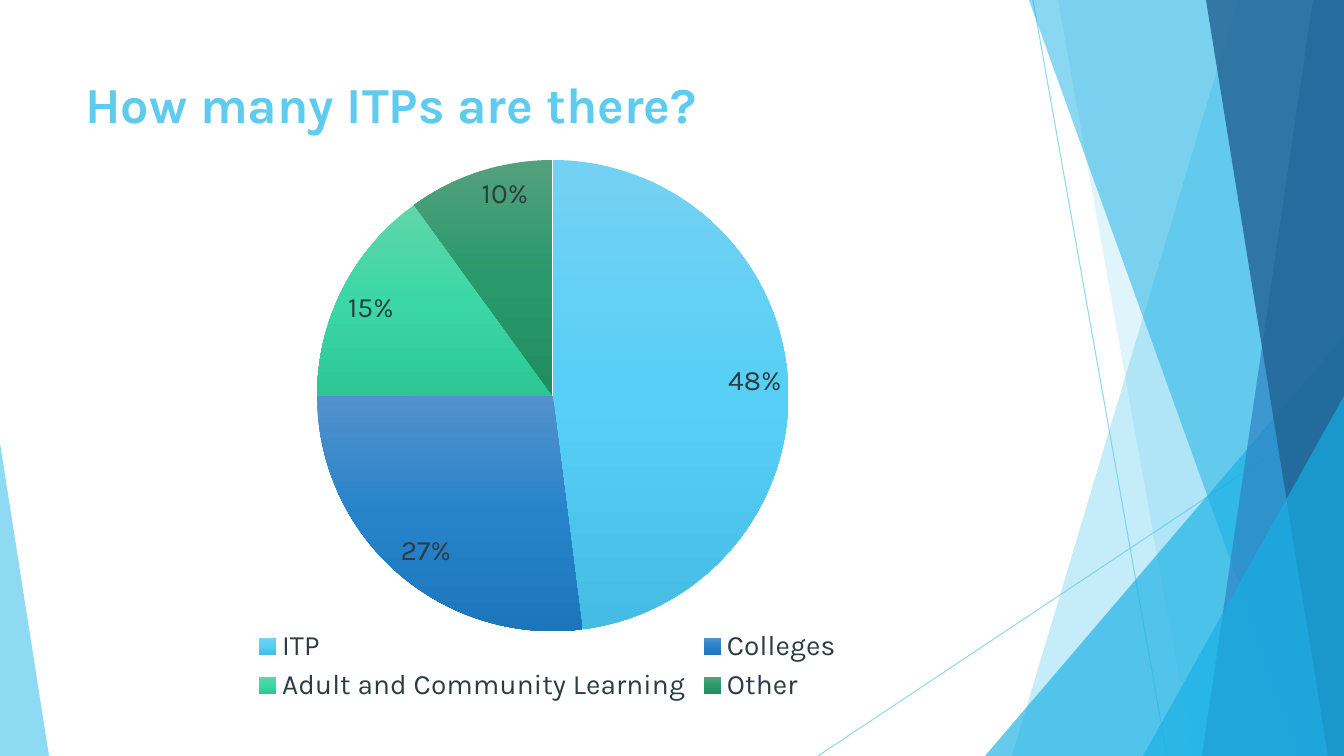
import copy

import pptx
import pptx.chart.data
import pptx.dml.color
import pptx.enum.chart
import pptx.enum.shapes
import pptx.enum.text
import pptx.oxml.ns
import pptx.oxml.xmlchemy
import pptx.util

WIDTH, HEIGHT = 1344, 756
EMU_PER_PX = 12192000 / WIDTH
FONT = "Karla"
SKY, CYAN, BLUE, NAVY, INK = "5FCBEF", "17B0E4", "2E83C3", "226292", "2C3C43"

PROVIDERS = [
    ("ITP", 48, ("75D1F3", "58CFF6", "45BCE3")),
    ("Colleges", 27, ("5491CD", "2784CA", "1C76BB")),
    ("Adult and Community Learning", 15, ("60D6AC", "3BD7A4", "2CC795")),
    ("Other", 10, ("54A17D", "29996C", "208D61")),
]


def px(length):
    return pptx.util.Emu(round(length * EMU_PER_PX))


def rgb(hex_colour):
    return pptx.dml.color.RGBColor.from_string(hex_colour)


def add_child(parent, tag, **attributes):
    child = pptx.oxml.xmlchemy.OxmlElement(tag)
    for name, value in attributes.items():
        child.set(name, str(value))
    parent.append(child)
    return child


def set_opacity(element, percent):
    for colour in element.xpath(".//p:spPr//a:srgbClr"):
        add_child(colour, "a:alpha", val=percent * 1000)


def style_font(font, size, colour, bold=False):
    font.name = FONT
    font.size = pptx.util.Pt(size)
    font.bold = bold
    font.color.rgb = rgb(colour)


def paint(panel, colour, opacity):
    panel.shadow.inherit = False
    panel.fill.solid()
    panel.fill.fore_color.rgb = rgb(colour)
    panel.line.fill.background()
    set_opacity(panel._element, opacity)


def add_ray(slide, start, end):
    ray = slide.shapes.add_connector(
        pptx.enum.shapes.MSO_CONNECTOR.STRAIGHT, *map(px, start + end))
    ray.line.color.rgb = rgb(SKY)
    ray.line.width = pptx.util.Pt(0.75)
    set_opacity(ray._element, 70)
    add_child(ray._element.spPr, "a:effectLst")


def add_band(slide, top_x, bottom_x, colour, opacity):
    """Fill from a slanted left side to the right edge of the slide."""
    builder = slide.shapes.build_freeform(top_x, 0, scale=EMU_PER_PX)
    builder.add_line_segments(
        [(WIDTH, 0), (WIDTH, HEIGHT), (bottom_x, HEIGHT)], close=True)
    paint(builder.convert_to_shape(), colour, opacity)


def add_wedge(slide, left, top, width, apex, colour, opacity):
    """Stand a triangle on the bottom edge; apex is 0 for left, 1 for right."""
    wedge = slide.shapes.add_shape(
        pptx.enum.shapes.MSO_SHAPE.ISOSCELES_TRIANGLE,
        px(left), px(top), px(width), px(HEIGHT - top))
    wedge.adjustments[0] = apex
    paint(wedge, colour, opacity)


def add_backdrop(slide):
    add_ray(slide, (1033, 0), (1167, HEIGHT))
    add_ray(slide, (WIDTH, 406), (818, HEIGHT))
    add_band(slide, 1238, 1012, SKY, 36)
    add_band(slide, 1058, 1193, SKY, 20)
    add_wedge(slide, 985, 336, WIDTH - 985, 1, CYAN, 66)
    add_band(slide, 1029, 1301, CYAN, 50)
    add_band(slide, 1313, 1202, BLUE, 70)
    add_band(slide, 1206, 1328, NAVY, 80)
    add_wedge(slide, 1143, 396, WIDTH - 1143, 1, CYAN, 66)
    add_wedge(slide, 0, 443, 49, 0, SKY, 70)


def set_title(slide, wording):
    title = slide.shapes.title
    title.left, title.top, title.width, title.height = map(px, (75, 68, 948, 145))
    frame = title.text_frame
    frame.text = wording
    frame.word_wrap = True
    frame.vertical_anchor = pptx.enum.text.MSO_ANCHOR.TOP
    paragraph = frame.paragraphs[0]
    paragraph.alignment = pptx.enum.text.PP_ALIGN.LEFT
    style_font(paragraph.runs[0].font, 36, SKY, bold=True)


def place_plot(chart, x, y, w, h):
    """Fix the inner plot area, in fractions of the chart."""
    area = chart._chartSpace.chart.plotArea
    for old in area.findall(pptx.oxml.ns.qn("c:layout")):
        area.remove(old)
    layout = pptx.oxml.xmlchemy.OxmlElement("c:layout")
    area.insert(0, layout)
    manual = add_child(layout, "c:manualLayout")
    add_child(manual, "c:layoutTarget", val="inner")
    add_child(manual, "c:xMode", val="edge")
    add_child(manual, "c:yMode", val="edge")
    for side, fraction in zip("xywh", (x, y, w, h)):
        add_child(manual, f"c:{side}", val=fraction)


def shade_slice(series, index, colours):
    """Give a slice a three-stop gradient from top to bottom."""
    fill = series.points[index].format.fill
    fill.gradient()
    fill.gradient_angle = 270
    stops = series._element.xpath("c:dPt/c:spPr/a:gradFill/a:gsLst")[index]
    stops.insert(1, copy.deepcopy(stops[0]))
    for stop, position, colour in zip(fill.gradient_stops, (0, 0.5, 1), colours):
        stop.position = position
        stop.color.rgb = rgb(colour)


def add_provider_pie(slide):
    names, shares, gradients = zip(*PROVIDERS)
    shares_by_provider = pptx.chart.data.CategoryChartData()
    shares_by_provider.categories = names
    shares_by_provider.add_series("Series 1", shares)
    chart = slide.shapes.add_chart(
        pptx.enum.chart.XL_CHART_TYPE.PIE,
        px(24), px(140), px(1047), px(568), shares_by_provider).chart
    chart.has_title = False
    style_font(chart.font, 20, INK)
    chart.has_legend = True
    chart.legend.position = pptx.enum.chart.XL_LEGEND_POSITION.BOTTOM
    chart.legend.include_in_layout = False
    style_font(chart.legend.font, 20, INK)
    place_plot(chart, 0.28, 0.03, 0.45, 0.84)

    pie = chart.plots[0]
    pie.vary_by_categories = True
    for index, colours in enumerate(gradients):
        shade_slice(pie.series[0], index, colours)
    pie.has_data_labels = True
    labels = pie.data_labels
    labels.show_percentage = True
    labels.show_value = False
    labels.number_format = "0%"
    labels.number_format_is_linked = False
    labels.position = pptx.enum.chart.XL_LABEL_POSITION.INSIDE_END
    style_font(labels.font, 20, INK)


def main():
    deck = pptx.Presentation()
    deck.slide_width, deck.slide_height = px(WIDTH), px(HEIGHT)
    slide = deck.slides.add_slide(deck.slide_layouts[5])
    add_backdrop(slide)
    set_title(slide, "How many ITPs are there?")
    add_provider_pie(slide)
    deck.save("out.pptx")


if __name__ == "__main__":
    main()
